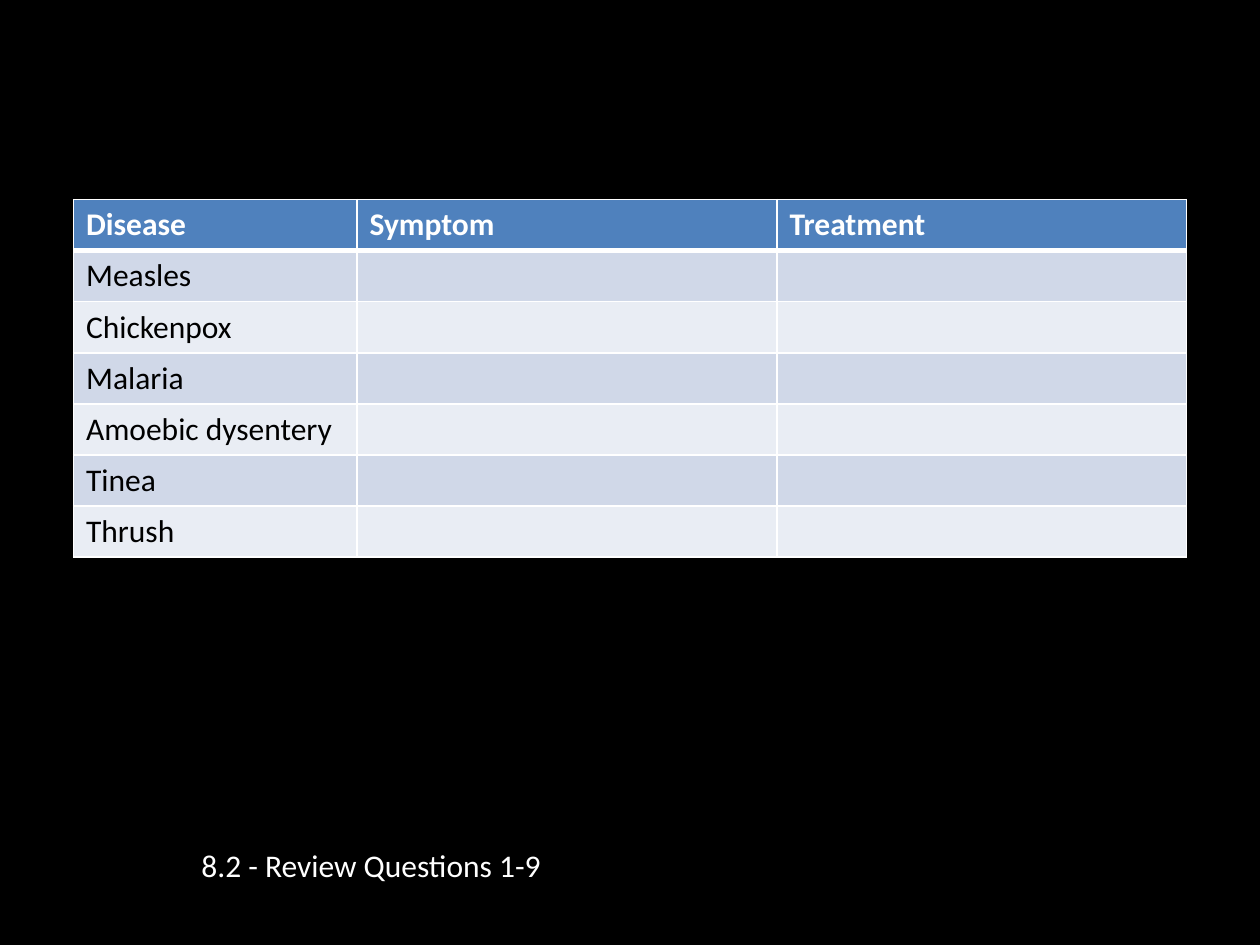
from dataclasses import dataclass

from lxml.etree import SubElement
from pptx import Presentation
from pptx.dml.color import RGBColor
from pptx.enum.text import MSO_AUTO_SIZE
from pptx.oxml.ns import qn
from pptx.util import Pt

HEADERS = ("Disease", "Symptom", "Treatment")
DISEASES = ("Measles", "Chickenpox", "Malaria", "Amoebic dysentery", "Tinea", "Thrush")
REVIEW_NOTE = "8.2 - Review Questions 1-9"

COLUMN_WIDTHS = (162, 240, 234)
ROW_HEIGHT = 29.2
TABLE_LEFT, TABLE_TOP = 42, 114


@dataclass(frozen=True)
class Theme:
    font: str = "Calibri"
    size: int = 18
    background: str = "000000"
    light_text: str = "FFFFFF"
    dark_text: str = "000000"
    header_fill: str = "4F81BD"
    band_fills: tuple = ("D0D8E8", "E9EDF4")
    border: str = "FFFFFF"
    thin: int = 1
    thick: int = 3


THEME = Theme()


def paint(fill, color):
    fill.solid()
    fill.fore_color.rgb = RGBColor.from_string(color)


def style_text(paragraph, color, bold=False):
    font = paragraph.font
    font.name, font.size, font.bold = THEME.font, Pt(THEME.size), bold
    font.color.rgb = RGBColor.from_string(color)


def add_borders(cell, top, bottom):
    """Draw all four cell edges; must run before the cell's fill is set."""
    properties = cell._tc.get_or_add_tcPr()
    widths = {"a:lnL": THEME.thin, "a:lnR": THEME.thin, "a:lnT": top, "a:lnB": bottom}
    for tag, width in widths.items():
        line = SubElement(properties, qn(tag), w=str(Pt(width)))
        SubElement(SubElement(line, qn("a:solidFill")), qn("a:srgbClr"), val=THEME.border)


def add_disease_table(slide):
    rows = [HEADERS] + [(disease, "", "") for disease in DISEASES]
    table = slide.shapes.add_table(
        len(rows), len(HEADERS), Pt(TABLE_LEFT), Pt(TABLE_TOP),
        Pt(sum(COLUMN_WIDTHS)), Pt(ROW_HEIGHT * len(rows))).table
    for column, width in zip(table.columns, COLUMN_WIDTHS):
        column.width = Pt(width)
    for row_index, texts in enumerate(rows):
        table.rows[row_index].height = Pt(ROW_HEIGHT)
        is_header = row_index == 0
        fill = THEME.header_fill if is_header else THEME.band_fills[(row_index - 1) % 2]
        color = THEME.light_text if is_header else THEME.dark_text
        top = THEME.thick if row_index == 1 else THEME.thin
        bottom = THEME.thick if is_header else THEME.thin
        for column_index, text in enumerate(texts):
            cell = table.cell(row_index, column_index)
            cell.text = text
            style_text(cell.text_frame.paragraphs[0], color, bold=is_header)
            add_borders(cell, top, bottom)
            paint(cell.fill, fill)


def add_review_note(slide):
    frame = slide.shapes.add_textbox(Pt(108), Pt(480), Pt(211), Pt(29)).text_frame
    frame.word_wrap = False
    frame.auto_size = MSO_AUTO_SIZE.SHAPE_TO_FIT_TEXT
    frame.text = REVIEW_NOTE
    style_text(frame.paragraphs[0], THEME.light_text)


def main():
    presentation = Presentation()
    presentation.slide_width, presentation.slide_height = Pt(720), Pt(540)
    slide = presentation.slides.add_slide(presentation.slide_layouts[6])
    paint(slide.background.fill, THEME.background)
    add_disease_table(slide)
    add_review_note(slide)
    presentation.save("out.pptx")


if __name__ == "__main__":
    main()
